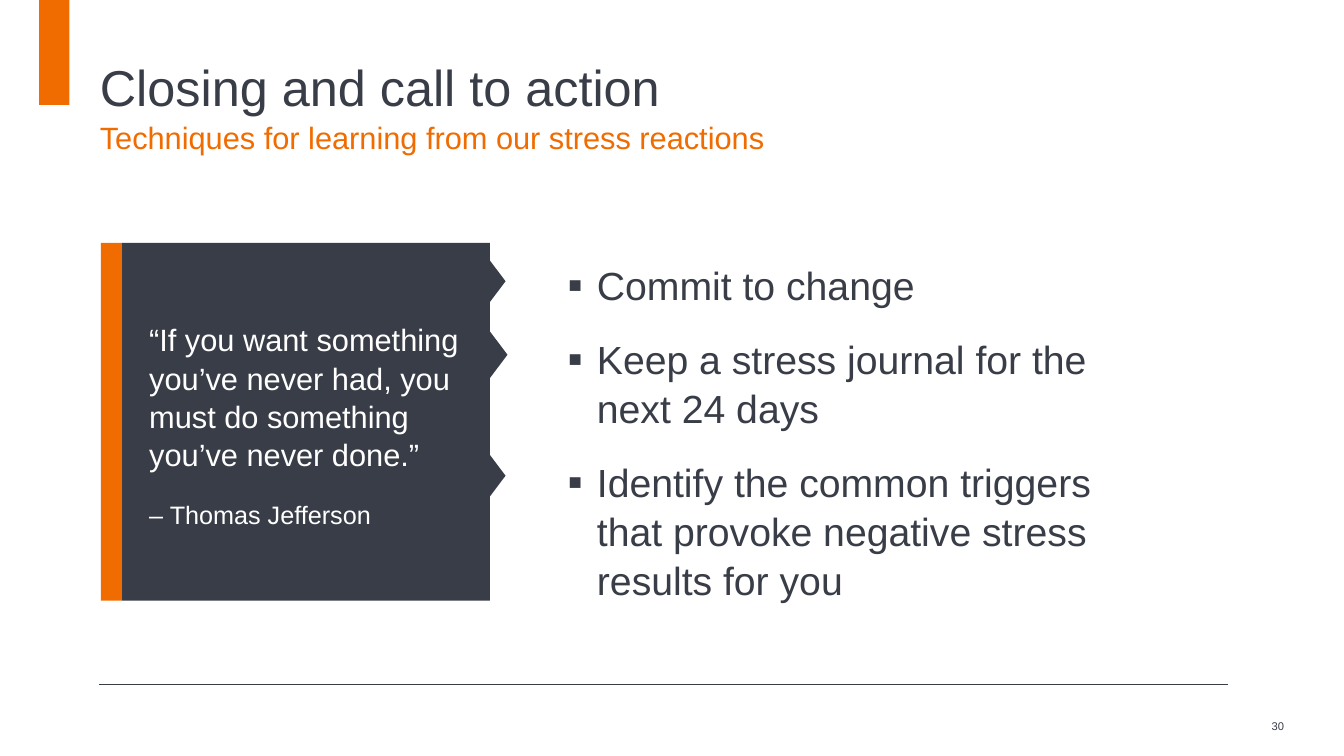
import pptx
import pptx.util
import pptx.dml.color
import pptx.enum.shapes
import pptx.enum.text
import pptx.oxml

Pt = pptx.util.Pt
RGB = pptx.dml.color.RGBColor.from_string
Shape = pptx.enum.shapes.MSO_SHAPE
Anchor = pptx.enum.text.MSO_ANCHOR
Align = pptx.enum.text.PP_ALIGN
NAMESPACE = 'xmlns:a="http://schemas.openxmlformats.org/drawingml/2006/main"'
COLORS = {"slate": "393D47", "orange": "F06C00", "white": "FFFFFF"}


def add_block(kind, left, top, width, height, color, rotation=0):
    block = page.shapes.add_shape(kind, Pt(left), Pt(top), Pt(width), Pt(height))
    block.shadow.inherit = False
    block.fill.solid()
    block.fill.fore_color.rgb = RGB(COLORS[color])
    block.line.fill.background()
    block.rotation = rotation


def add_text(left, top, width, height, lines, color, anchor=Anchor.TOP,
             align=Align.LEFT, after=0, spacing=1.0, bullet=None):
    box = page.shapes.add_textbox(Pt(left), Pt(top), Pt(width), Pt(height))
    frame = box.text_frame
    frame.word_wrap = True
    frame.vertical_anchor = anchor
    frame.margin_left = frame.margin_right = 0
    frame.margin_top = frame.margin_bottom = 0
    for index, (text, size) in enumerate(lines):
        para = frame.paragraphs[0] if index == 0 else frame.add_paragraph()
        para.alignment = align
        para.space_after = Pt(after)
        para.line_spacing = spacing
        if bullet:
            properties = para._p.get_or_add_pPr()
            properties.set("marL", str(Pt(21)))
            properties.set("indent", str(Pt(-21)))
            for element in (
                f'<a:buClr {NAMESPACE}><a:srgbClr val="{COLORS[color]}"/></a:buClr>',
                f'<a:buSzPct {NAMESPACE} val="110000"/>',
                f'<a:buFont {NAMESPACE} typeface="Arial"/>',
                f'<a:buChar {NAMESPACE} char="{bullet}"/>',
            ):
                properties.append(pptx.oxml.parse_xml(element))
        span = para.add_run()
        span.text = text
        span.font.name = "Arial"
        span.font.size = Pt(size)
        span.font.color.rgb = RGB(COLORS[color])


deck = pptx.Presentation()
deck.slide_width = Pt(960)
deck.slide_height = Pt(540)
page = deck.slides.add_slide(deck.slide_layouts[6])

add_text(880.5, 504, 36.7, 28.8, [("30", 8)], "slate", Anchor.MIDDLE, Align.RIGHT)

rule = page.shapes.add_connector(
    pptx.enum.shapes.MSO_CONNECTOR.STRAIGHT, Pt(71), Pt(489), Pt(877), Pt(489))
rule.line.color.rgb = RGB(COLORS["slate"])
rule.line.width = Pt(0.5)
rule._element.spPr.append(pptx.oxml.parse_xml(f"<a:effectLst {NAMESPACE}/>"))

add_block(Shape.RECTANGLE, 28, 0, 21.6, 75, "orange")
add_text(71.3, 32.4, 805.7, 51.1, [("Closing and call to action", 36)],
         "slate", Anchor.BOTTOM)
add_text(71.3, 85, 805.7, 28, [("Techniques for learning from our stress reactions", 22)],
         "orange")

actions = [
    "Commit to change",
    "Keep a stress journal for the next 24 days",
    "Identify the common triggers that provoke negative stress results for you",
]
add_text(405.4, 185, 427.7, 255.6, [(action, 28) for action in actions],
         "slate", after=18, spacing=1.04, bullet="▪")

add_block(Shape.RECTANGLE, 87, 173.5, 263, 255.6, "slate")
quote = [
    ("“If you want something you’ve never had, you must do something you’ve never done.”", 22),
    ("– Thomas Jefferson", 18),
]
add_text(106.6, 228.2, 223.2, 147, quote, "white", after=18, spacing=1.04)
add_block(Shape.RECTANGLE, 72, 173.5, 15, 255.6, "orange")

for left, top in ((334.8, 193.7), (336.2, 246.2), (334.8, 332.6)):
    add_block(Shape.ISOSCELES_TRIANGLE, left, top, 38.2, 14.4, "slate", 90)

deck.save("out.pptx")
